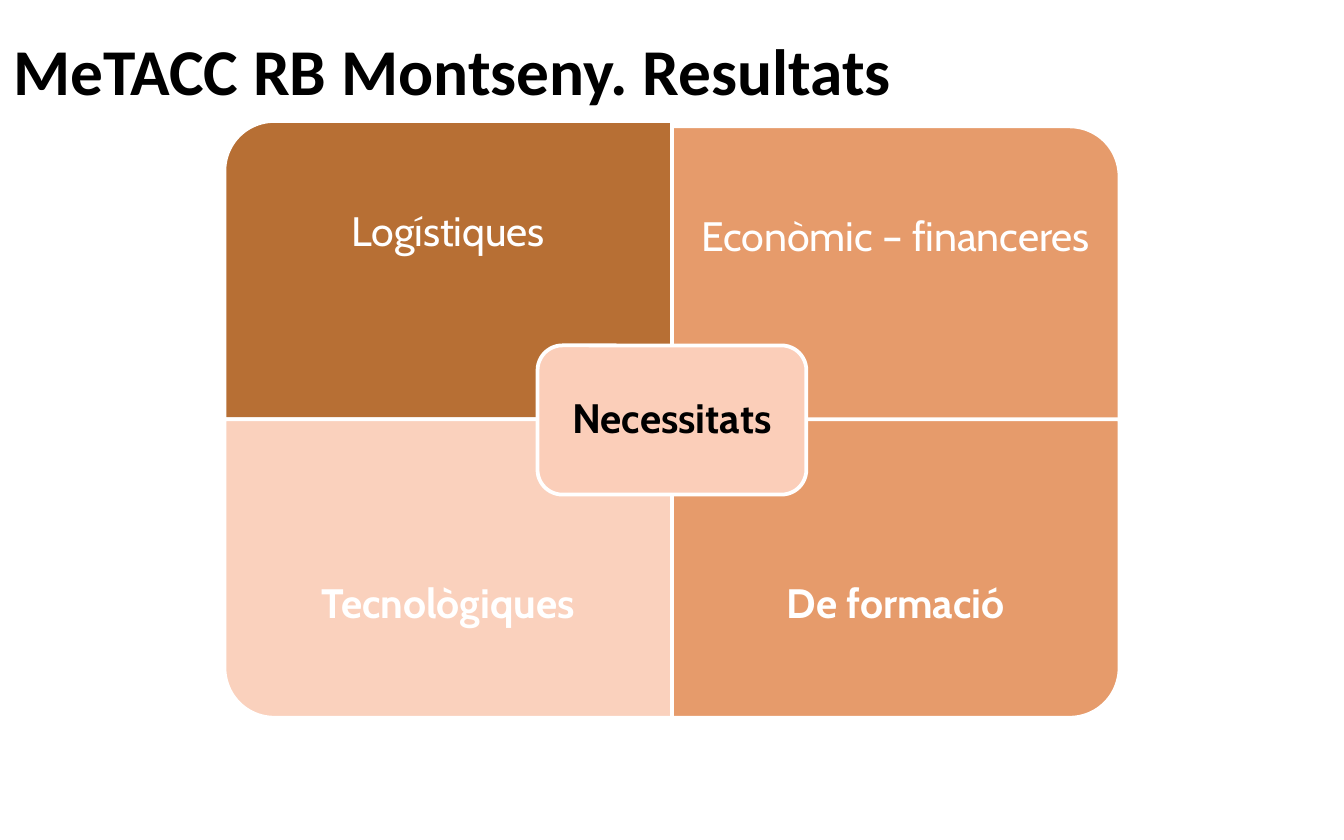
import pptx
import pptx.util
import pptx.dml.color
import pptx.enum.shapes
import pptx.enum.text

Inches, Pt = pptx.util.Inches, pptx.util.Pt
SHAPE = pptx.enum.shapes.MSO_SHAPE
ALIGN = pptx.enum.text.PP_ALIGN
MIDDLE = pptx.enum.text.MSO_ANCHOR.MIDDLE

TITLE = "MeTACC RB Montseny. Resultats"
CENTER = "Necessitats"
# text, column, row, top, turn, fill, bold
TILES = [
    ("Logístiques", 0, 0, 0.9, 270, "brown", False),
    ("Econòmic – financeres", 1, 0, 0.94, 0, "orange", False),
    ("Tecnològiques", 0, 1, 3.12, 180, "peach", True),
    ("De formació", 1, 1, 3.12, 90, "orange", True),
]
THEME = {
    "white": "FFFFFF", "black": "000000", "brown": "B76F34",
    "orange": "E69B6B", "peach": "FAD1BD", "core": "FBCEB9",
    "head": "Calibri", "body": "Cabin",
    "head_size": 35, "body_size": 22, "line": 2,
}
LEFT, WIDE, HIGH = 1.67, 3.33, 2.22
LABEL = 1.67


def color(name):
    return pptx.dml.color.RGBColor.from_string(THEME[name])


def add_text(slide, text, box, inset, role, ink, bold, align):
    frame = slide.shapes.add_textbox(*map(Inches, box)).text_frame
    frame.word_wrap = True
    frame.vertical_anchor = MIDDLE
    side, edge = map(Inches, inset)
    frame.margin_left = frame.margin_right = side
    frame.margin_top = frame.margin_bottom = edge
    para = frame.paragraphs[0]
    para.alignment = align
    if role == "body":
        para.line_spacing = 0.9
    run = para.add_run()
    run.text = text
    run.font.name = THEME[role]
    run.font.size = Pt(THEME[role + "_size"])
    run.font.bold = bold
    run.font.color.rgb = color(ink)


def add_block(slide, kind, box, fill, turn=0):
    """Draw a filled block; a quarter turn swaps its sides about its center."""
    left, top, wide, high = box
    if turn % 180:
        shift = (wide - high) / 2
        left, top, wide, high = left + shift, top - shift, high, wide
    block = slide.shapes.add_shape(kind, *map(Inches, (left, top, wide, high)))
    block.rotation = turn
    block.shadow.inherit = False
    block.fill.solid()
    block.fill.fore_color.rgb = color(fill)
    block.line.color.rgb = color("white")
    block.line.width = Pt(THEME["line"])


def main():
    deck = pptx.Presentation()
    deck.slide_width, deck.slide_height = Inches(10), Inches(6.25)
    slide = deck.slides.add_slide(deck.slide_layouts[6])

    add_text(slide, TITLE, (0, 0, 8.67, 1.04), (0.1, 0.05),
             "head", "black", True, ALIGN.LEFT)

    for text, col, row, top, turn, fill, bold in TILES:
        left = LEFT + col * WIDE
        add_block(slide, SHAPE.ROUND_1_RECTANGLE, (left, top, WIDE, HIGH),
                  fill, turn)
        drop = row * (HIGH - LABEL)
        add_text(slide, text, (left, top + drop, WIDE, LABEL), (0.17, 0.17),
                 "body", "white", bold, ALIGN.CENTER)

    core = (4, 2.57, 2, 1.11)
    add_block(slide, SHAPE.ROUNDED_RECTANGLE, core, "core")
    add_text(slide, CENTER, core, (0.14, 0.14),
             "body", "black", True, ALIGN.CENTER)
    deck.save("out.pptx")


if __name__ == "__main__":
    main()
